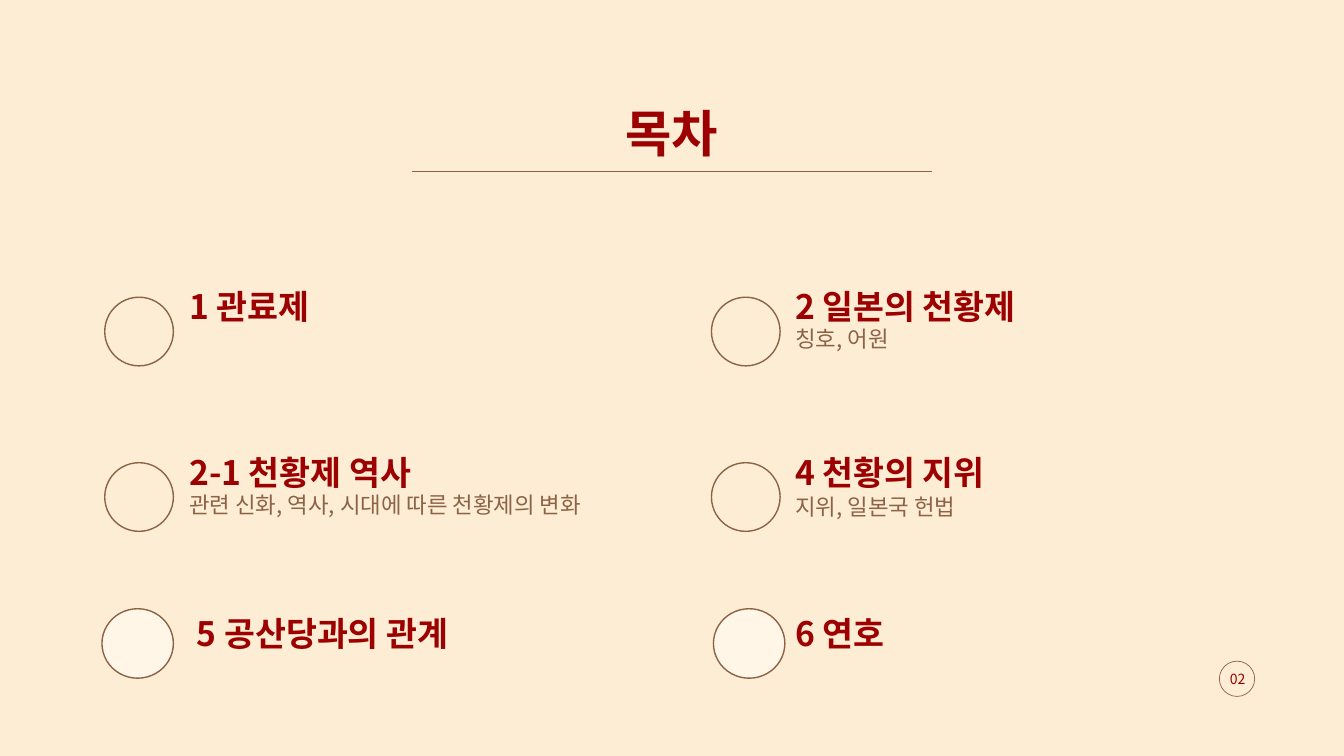
from dataclasses import dataclass
from typing import Optional

from lxml import etree
from pptx import Presentation
from pptx.dml.color import RGBColor
from pptx.enum import shapes, text
from pptx.oxml import ns
from pptx.util import Cm, Pt

FONT = "Noto Sans CJK KR"
COLORS = {"background": "FCEDD4", "red": "9D0000", "brown": "8D6347", "cream": "FFF6E7"}
ALIGN, ANCHOR = text.PP_ALIGN, text.MSO_ANCHOR


@dataclass
class Circle:
    left: float
    top: float
    width: float
    height: float
    fill: Optional[str] = None
    line_width: float = 1


@dataclass
class Label:
    words: str
    left: float
    top: float
    width: float = 10.49
    height: float = 0.97
    size: int = 24
    color: str = "red"
    bold: bool = True
    align: ALIGN = ALIGN.LEFT
    anchor: ANCHOR = ANCHOR.TOP
    line_spacing: float = 1.0


@dataclass
class Entry:
    heading: str
    column: int
    row: int
    detail: str = ""
    detail_offset: float = 0.99
    detail_width: float = 10.49


def rgb(name: str) -> RGBColor:
    return RGBColor.from_string(COLORS[name])


def draw_circle(slide, circle: Circle) -> None:
    shape = slide.shapes.add_shape(
        shapes.MSO_SHAPE.OVAL,
        Cm(circle.left), Cm(circle.top), Cm(circle.width), Cm(circle.height),
    )
    shape.shadow.inherit = False
    if circle.fill:
        shape.fill.solid()
        shape.fill.fore_color.rgb = rgb(circle.fill)
    else:
        shape.fill.background()
    shape.line.color.rgb = rgb("brown")
    shape.line.width = Pt(circle.line_width)


def draw_label(slide, label: Label) -> None:
    box = slide.shapes.add_textbox(
        Cm(label.left), Cm(label.top), Cm(label.width), Cm(label.height)
    )
    frame = box.text_frame
    frame.word_wrap = True
    frame.margin_top = frame.margin_bottom = 0
    frame.vertical_anchor = label.anchor
    paragraph = frame.paragraphs[0]
    paragraph.text = label.words
    paragraph.alignment = label.align
    paragraph.line_spacing = label.line_spacing
    font = paragraph.font
    font.name, font.size, font.bold = FONT, Pt(label.size), label.bold
    font.color.rgb = rgb(label.color)
    # Hangul takes the East Asian typeface
    properties = paragraph._p.pPr.find(ns.qn("a:defRPr"))
    etree.SubElement(properties, ns.qn("a:ea")).set("typeface", FONT)


def draw_rule(slide, left: float, right: float, top: float) -> None:
    rule = slide.shapes.add_connector(
        shapes.MSO_CONNECTOR.STRAIGHT, Cm(left), Cm(top), Cm(right), Cm(top)
    )
    rule.line.color.rgb = rgb("brown")
    rule.line.width = Pt(1)
    etree.SubElement(rule._element.spPr, ns.qn("a:effectLst"))


HEADING_LEFTS = (4.52, 19.79)
HEADING_TOPS = (7.21, 11.38, 15.44)

CIRCLES = [
    Circle(left, top, 1.73, 1.73) for top in (7.49, 11.66) for left in (2.64, 17.93)
] + [Circle(left, 15.34, 1.8, 1.75, fill="cream") for left in (2.57, 17.98)]

ENTRIES = [
    Entry("1 관료제", 0, 0),
    Entry("2 일본의 천황제", 1, 0, "칭호, 어원"),
    Entry("2-1 천황제 역사", 0, 1, "관련 신화, 역사, 시대에 따른 천황제의 변화",
          detail_width=12.62),
    Entry("4 천황의 지위", 1, 1, "지위, 일본국 헌법", detail_offset=1.04),
    Entry(" 5 공산당과의 관계", 0, 2),
    Entry("6 연호", 1, 2),
]


def draw_entry(slide, entry: Entry) -> None:
    left, top = HEADING_LEFTS[entry.column], HEADING_TOPS[entry.row]
    draw_label(slide, Label(entry.heading, left, top))
    if entry.detail:
        draw_label(slide, Label(
            entry.detail, left, top + entry.detail_offset, entry.detail_width, 1.19,
            size=16, color="brown", bold=False,
        ))


def main() -> None:
    presentation = Presentation()
    presentation.slide_width, presentation.slide_height = Cm(33.87), Cm(19.05)
    slide = presentation.slides.add_slide(presentation.slide_layouts[6])
    slide.background.fill.solid()
    slide.background.fill.fore_color.rgb = rgb("background")

    # Title and rule
    draw_label(slide, Label("목차", 2.33, 1.73, 29.21, 2.39, size=36, align=ALIGN.CENTER,
                            anchor=ANCHOR.BOTTOM, line_spacing=0.9))
    draw_rule(slide, 10.38, 23.49, 4.32)

    # Contents
    for circle in CIRCLES:
        draw_circle(slide, circle)
    for entry in ENTRIES:
        draw_entry(slide, entry)

    # Page number
    draw_circle(slide, Circle(30.73, 16.66, 0.89, 0.89, line_width=0.5))
    draw_label(slide, Label("02", 30.68, 16.61, 1.02, 1.02, size=10, bold=False,
                            align=ALIGN.CENTER, anchor=ANCHOR.MIDDLE))

    presentation.save("out.pptx")


if __name__ == "__main__":
    main()
